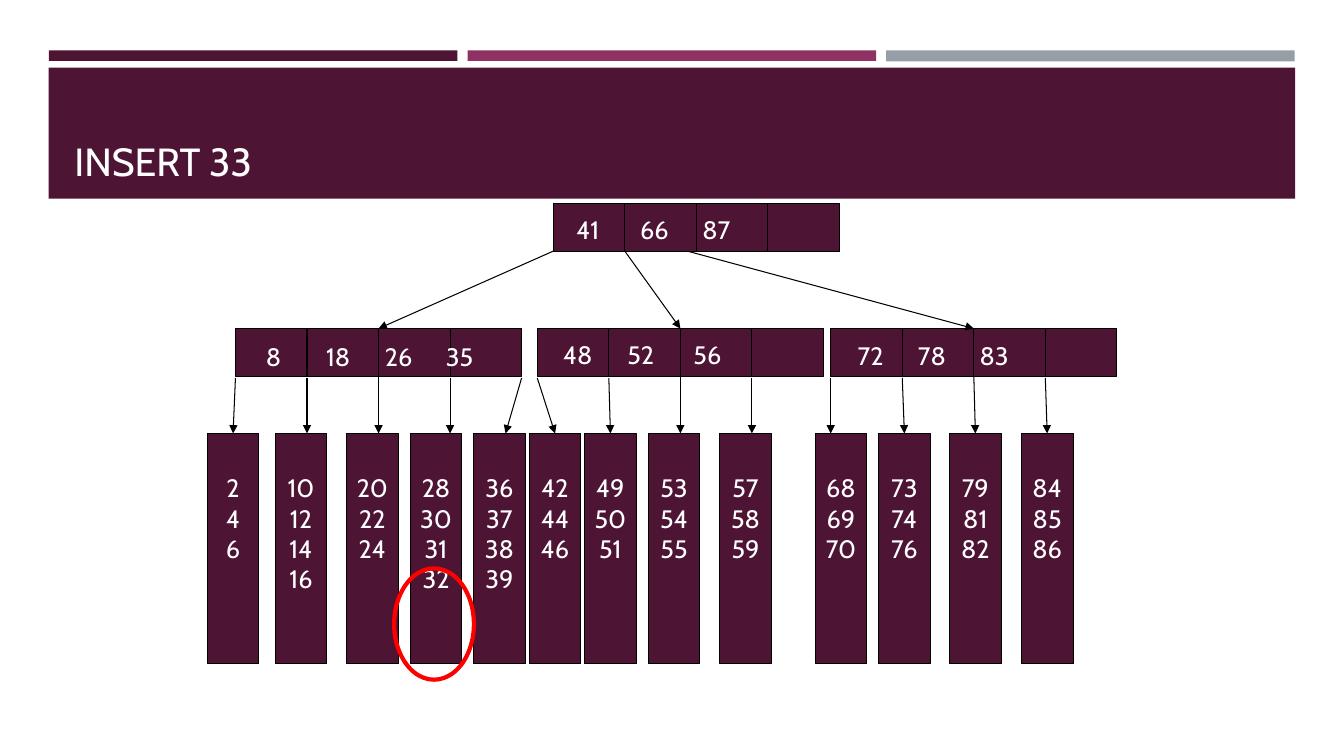
import pptx
import pptx.util
import pptx.dml.color
import pptx.enum.shapes
import pptx.enum.text
import pptx.oxml.ns
import lxml.etree

Pt = pptx.util.Pt
KIND = pptx.enum.shapes.MSO_SHAPE
ALIGN = pptx.enum.text.PP_ALIGN
ANCHOR = pptx.enum.text.MSO_ANCHOR
qn = pptx.oxml.ns.qn

PLUM, BLACK, WHITE = "4D1434", "000000", "FFFFFF"
NODE_W, NODE_H, STEP = 204.4, 34, 51.1
NODE_Y, LEAF_Y, LEAF_W, LEAF_H = 234.7, 309.6, 37, 164.2


def paint(form, color):
    """Give a fill, line or font one solid colour."""
    if hasattr(form, "solid"):
        form.solid()
        form.fore_color.rgb = pptx.dml.color.RGBColor.from_string(color)
    else:
        form.color.rgb = pptx.dml.color.RGBColor.from_string(color)


def join(shapes, x1, y1, x2, y2, arrow=False):
    """Draw a thin black line, with an arrowhead at its end if asked."""
    line = shapes.add_connector(pptx.enum.shapes.MSO_CONNECTOR.STRAIGHT,
                                Pt(x1), Pt(y1), Pt(x2), Pt(y2))
    paint(line.line, BLACK)
    line.line.width = Pt(0.75)
    if arrow:
        lxml.etree.SubElement(line.line._get_or_add_ln(), qn("a:tailEnd"), type="triangle")
    lxml.etree.SubElement(line._element.spPr, qn("a:effectLst"))
    return line


deck = pptx.Presentation()
deck.slide_width, deck.slide_height = Pt(960), Pt(540)
slide = deck.slides.add_slide(deck.slide_layouts[6])
shapes = slide.shapes

# Header bars and title
bars = [
    (35, 36, 291.8, 7.5, PLUM),
    (633, 36, 291.8, 7.8, "969FA7"),
    (334, 36, 291.8, 7.5, "903163"),
    (34.8, 48.4, 890.4, 93.6, PLUM),
]
for x, y, w, h, color in bars:
    bar = shapes.add_shape(KIND.RECTANGLE, Pt(x), Pt(y), Pt(w), Pt(h))
    bar.shadow.inherit = False
    paint(bar.fill, color)
    bar.line.fill.background()

title = shapes.add_textbox(Pt(46), Pt(55.5), Pt(868), Pt(80))
title.text_frame.word_wrap = True
title.text_frame.vertical_anchor = ANCHOR.BOTTOM
run = title.text_frame.paragraphs[0].add_run()
run.text = "INSERT 33"
run.font.name, run.font.size = "Cabin", Pt(28)
paint(run.font, WHITE)

# Inner nodes: left, top, text left, text top, keys, tab stops
nodes = [
    (395.2, 145.4, 404.6, 149.8, ["41", "66", "87"], [45.5, 90]),
    (168.2, NODE_Y, 182.8, 240.5, ["8", "18", "26", "35"], [43, 85, 128.6]),
    (383.8, NODE_Y, 395.2, 239, ["48", "52", "56"], [45.8, 93]),
    (593.4, NODE_Y, 605.6, 239.8, ["72", "78", "83"], [43, 87]),
]
rects = []
for x, y, tx, ty, keys, tabs in nodes:
    group = shapes.add_group_shape().shapes
    rect = group.add_shape(KIND.RECTANGLE, Pt(x), Pt(y), Pt(NODE_W), Pt(NODE_H))
    rect.shadow.inherit = False
    paint(rect.fill, PLUM)
    paint(rect.line, BLACK)
    rect.line.width = Pt(0.75)
    rects.append(rect)
    for i in range(1, 4):
        join(group, x + i * STEP, y, x + i * STEP, y + NODE_H)
    box = group.add_textbox(Pt(tx), Pt(ty), Pt(184), Pt(29))
    box.text_frame.word_wrap = True
    para = box.text_frame.paragraphs[0]
    stops = lxml.etree.SubElement(para._p.get_or_add_pPr(), qn("a:tabLst"))
    for tab in tabs:
        lxml.etree.SubElement(stops, qn("a:tab"), pos=str(int(Pt(tab))), algn="l")
    run = para.add_run()
    run.text = "\t".join(keys)
    run.font.name, run.font.size = "Cabin", Pt(18)
    paint(run.font, WHITE)

# Arrows from the root to its children
for x, rect in zip([395.2, 446.3, 491], rects[1:]):
    arrow = join(shapes, x, 179.4, rect.left.pt + NODE_W / 2, NODE_Y, True)
    arrow.end_connect(rect, 0)

# Leaves: parent, slot in the parent, left, shift of the arrow tip, keys
leaves = [
    (1, 0, 148, 0, [2, 4, 6]),
    (1, 1, 196.5, 0, [10, 12, 14, 16]),
    (1, 2, 247.5, 0, [20, 22, 24]),
    (1, 3, 293, 0, [28, 30, 31, 32]),
    (1, 4, 338.2, -11.5, [36, 37, 38, 39]),
    (2, 0, 378, 11.5, [42, 44, 46]),
    (2, 1, 417.5, 0, [49, 50, 51]),
    (2, 2, 463, 0, [53, 54, 55]),
    (2, 3, 514, 0, [57, 58, 59]),
    (3, 0, 582.2, 0, [68, 69, 70]),
    (3, 1, 627.5, 0, [73, 74, 76]),
    (3, 2, 678.2, 0, [79, 81, 82]),
    (3, 3, 729.5, 0, [84, 85, 86]),
]
for up, slot, x, shift, keys in leaves:
    leaf = shapes.add_shape(KIND.RECTANGLE, Pt(x), Pt(LEAF_Y), Pt(LEAF_W), Pt(LEAF_H))
    leaf.shadow.inherit = False
    paint(leaf.fill, PLUM)
    paint(leaf.line, BLACK)
    leaf.line.width = Pt(0.75)
    frame = leaf.text_frame
    frame.word_wrap = False
    frame.vertical_anchor = ANCHOR.TOP
    frame.margin_top = Pt(28)
    for i, key in enumerate(keys):
        para = frame.add_paragraph() if i else frame.paragraphs[0]
        para.alignment = ALIGN.CENTER
        run = para.add_run()
        run.text = str(key)
        run.font.name, run.font.size = "Cabin", Pt(18)
        paint(run.font, WHITE)

    start = nodes[up][0] + slot * STEP
    tip = start + shift
    arrow = join(shapes, start, 270, tip, LEAF_Y, True)
    if slot == 2:
        arrow.begin_connect(rects[up], 2)
    if abs(tip - x - LEAF_W / 2) < 2:
        arrow.end_connect(leaf, 0)

# Ring around the full leaf
ring = shapes.add_shape(KIND.OVAL, Pt(281.5), Pt(406), Pt(57), Pt(79.5))
ring.shadow.inherit = False
ring.fill.background()
paint(ring.line, "FF0000")
ring.line.width = Pt(3)

deck.save("out.pptx")
